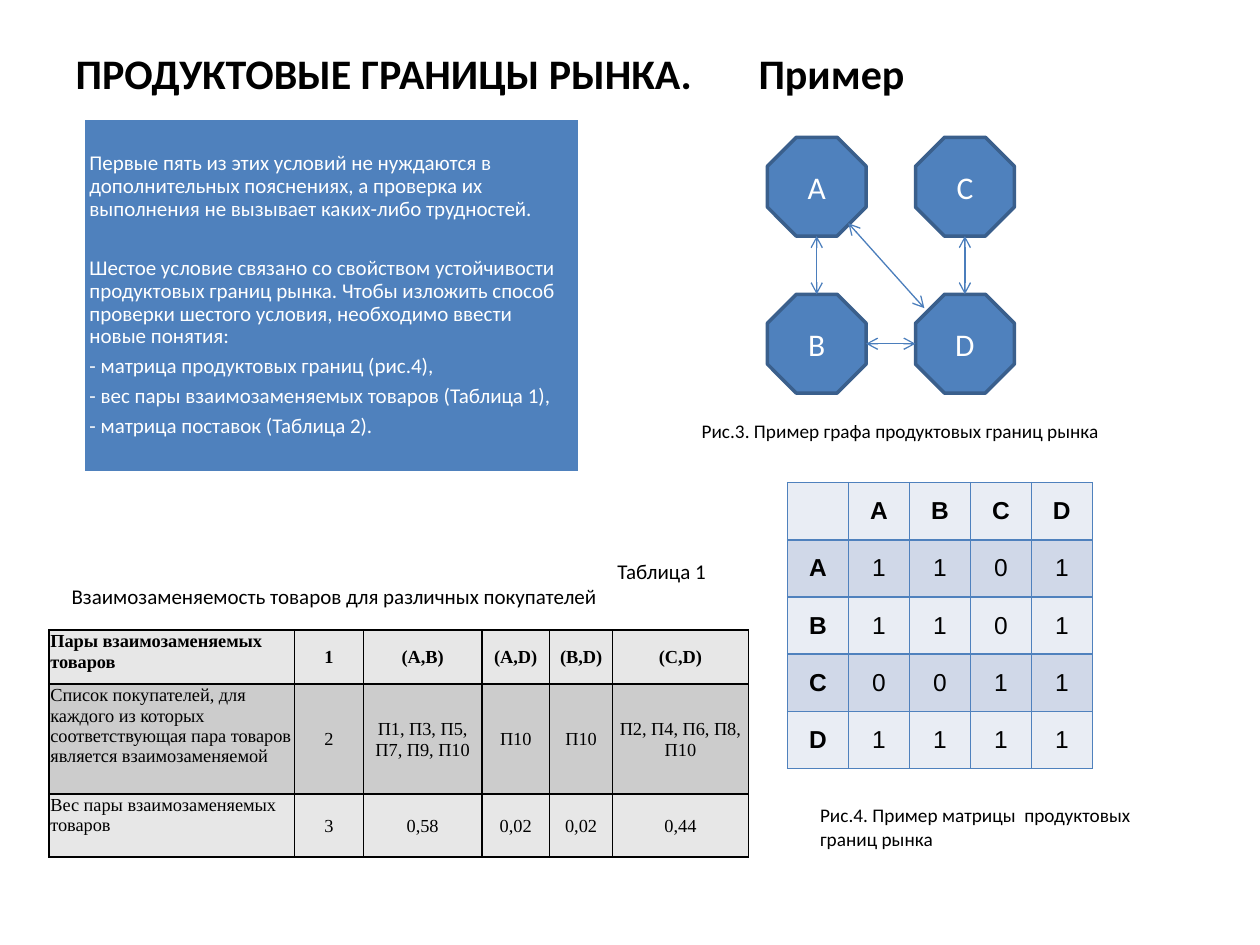
from lxml import etree
from pptx import Presentation
from pptx import util as u
from pptx.dml import color
from pptx.enum import shapes, text
from pptx.oxml import ns

WIDE, HIGH = u.Inches(10), u.Inches(7.5)
LEFT, MID, RIGHT = text.PP_ALIGN.LEFT, text.PP_ALIGN.CENTER, text.PP_ALIGN.RIGHT
BLUE = "4F81BD"


def area(x, y, w, h):
    """Turn percentages of the slide into a box in EMU."""
    return [int(v * side / 100) for v, side in zip((x, y, w, h), (WIDE, HIGH) * 2)]


def rgb(code):
    """Give the colour for a hex string."""
    return color.RGBColor.from_string(code)


def sub(node, tag, **attrs):
    """Append a DrawingML element."""
    return etree.SubElement(node, ns.qn("a:" + tag), attrs)


def put(obj, vals):
    """Set attributes from a dict."""
    for key, val in vals.items():
        setattr(obj, key, val)


def paint(part, fill, line, width):
    """Give a shape a plain fill and line."""
    part.fill.solid()
    part.fill.fore_color.rgb = rgb(fill)
    part.line.color.rgb = rgb(line)
    part.line.width = u.Pt(width)


def write(frame, lines, size, hue="000000", face="Calibri", bold=False, **para):
    """Fill a text frame with formatted paragraphs."""
    frame.text = "\n".join(lines)
    for par in frame.paragraphs:
        put(par, para)
        put(par.font, {"size": u.Pt(size), "name": face, "bold": bold})
        par.font.color.rgb = rgb(hue)


def head(slide, box):
    """Place the two-part title with a tab stop between the parts."""
    title = slide.shapes.title
    put(title, dict(zip(("left", "top", "width", "height"), box)))
    write(title.text_frame, ["ПРОДУКТОВЫЕ ГРАНИЦЫ РЫНКА.\tПример"], 24, bold=True, alignment=LEFT)
    put(title.text_frame, {"vertical_anchor": text.MSO_ANCHOR.MIDDLE,
                           "auto_size": text.MSO_AUTO_SIZE.NONE})
    stops = sub(title.text_frame.paragraphs[0]._p.get_or_add_pPr(), "tabLst")
    sub(stops, "tab", pos=str(u.Inches(5.42)), algn="l")


def panel(slide, box, lines):
    """Place the body text on its blue panel."""
    body = slide.placeholders[1]
    put(body, dict(zip(("left", "top", "width", "height"), box)))
    paint(body, BLUE, "FFFFFF", 2)
    frame = body.text_frame
    write(frame, lines, 12, "FFFFFF", alignment=LEFT, line_spacing=0.9,
          space_before=u.Pt(0), space_after=u.Pt(4.2))
    put(frame, {"vertical_anchor": text.MSO_ANCHOR.MIDDLE, "auto_size": text.MSO_AUTO_SIZE.NONE})
    put(frame, {"margin_" + side: u.Inches(0.05) for side in ("left", "right", "top", "bottom")})
    for par in frame.paragraphs:
        props = par._p.get_or_add_pPr()
        props.set("marL", "0")
        props.set("indent", "0")
        sub(props, "buNone")
    frame.paragraphs[1].space_before = u.Pt(17)


def graph(slide, box, names, links):
    """Draw octagon nodes on a two by two grid and the arrows between them."""
    x, y, w, h = box
    size = int(w * 0.4)
    spots = {}
    for i, name in enumerate(names):
        row, col = divmod(i, 2)
        spots[name] = x + col * (w - size), y + row * (h - size)
        node = slide.shapes.add_shape(shapes.MSO_SHAPE.OCTAGON, *spots[name], size, size)
        node.shadow.inherit = False
        paint(node, BLUE, "3A5F8C", 2)
        write(node.text_frame, [name], 18, "FFFFFF", alignment=MID)
        node.text_frame.vertical_anchor = text.MSO_ANCHOR.MIDDLE
    for start, end, out, into in links:
        ends = [int(p + size * s) for n, at in ((start, out), (end, into))
                for p, s in zip(spots[n], at)]
        link = slide.shapes.add_connector(shapes.MSO_CONNECTOR.STRAIGHT, *ends)
        link.line.color.rgb = rgb("4B7EBC")
        link.line.width = u.Pt(0.75)
        for tip in ("headEnd", "tailEnd"):
            sub(link.line._get_or_add_ln(), tip, type="arrow")
        sub(link._element.spPr, "effectLst")


def note(slide, box, lines, size):
    """Place a wrapped caption."""
    frame = slide.shapes.add_textbox(*box).text_frame
    frame.word_wrap = True
    write(frame, lines, size, alignment=LEFT)
    return frame


def edge(cell, hue):
    """Draw all four borders of a cell."""
    for tag in ("lnL", "lnR", "lnT", "lnB"):
        line = sub(cell._tc.get_or_add_tcPr(), tag, w="12700")
        sub(sub(line, "solidFill"), "srgbClr", val=hue)


def grid(slide, box, data, cols, rows, fills, hue, pads, style, bold, align):
    """Place a table whose columns and rows take weighted shares of the box."""
    table = slide.shapes.add_table(len(data), len(cols), *box).table
    for tracks, parts, full in ((table.columns, cols, box[2]), (table.rows, rows, box[3])):
        for track, part in zip(tracks, parts):
            put(track, {"width" if tracks is table.columns else "height":
                        int(full * part / sum(parts))})
    for r, line in enumerate(data):
        for c, word in enumerate(line):
            cell = table.cell(r, c)
            edge(cell, hue)
            cell.fill.solid()
            cell.fill.fore_color.rgb = rgb(fills[r % 2])
            way = align(c)
            write(cell.text_frame, [word], bold=bold(r, c), alignment=way, **style)
            put(cell, {"margin_" + k: u.Inches(v) for k, v in pads.items()})
            cell.vertical_anchor = text.MSO_ANCHOR.MIDDLE if way == MID else text.MSO_ANCHOR.TOP


def main():
    """Build and save the slide."""
    deck = Presentation()
    put(deck, {"slide_width": WIDE, "slide_height": HIGH})
    slide = deck.slides.add_slide(deck.slide_layouts[1])
    head(slide, area(5, 4, 87.5, 7.47))
    panel(slide, area(6.6, 12.53, 39.4, 37.47), [
        "Первые пять из этих условий не нуждаются в дополнительных пояснениях, "
        "а проверка их выполнения не вызывает каких-либо трудностей.",
        "Шестое условие связано со свойством устойчивости продуктовых границ рынка. "
        "Чтобы изложить способ проверки шестого условия, необходимо ввести новые понятия:",
        "- матрица продуктовых границ (рис.4),",
        "- вес пары взаимозаменяемых товаров (Таблица 1),",
        "- матрица поставок (Таблица 2)."])
    low, top = (0.5, 1), (0.5, 0)
    graph(slide, area(60.9, 14.53, 19.6, 27.07), "ACBD", [
        ("B", "D", (1, 0.5), (0, 0.5)), ("A", "B", low, top),
        ("C", "D", low, top), ("A", "D", (0.82, 0.87), (0.09, 0.14))])
    note(slide, area(54.7, 43.73, 35.2, 3.87), ["Рис.3. Пример графа продуктовых границ рынка"], 11)
    grid(slide, area(62.5, 51.07, 24.2, 30.27),
         [["", *"ABCD"], "A1101", "B1101", "C0011", "D1111"], [1] * 5, [1] * 5,
         ("E9EDF4", "D0D8E8"), BLUE, {"left": 0.07, "right": 0.07, "top": 0, "bottom": 0},
         {"size": 14, "face": "Arial", "space_before": u.Pt(6), "space_after": u.Pt(6)},
         lambda r, c: r == 0 or c == 0, lambda c: MID)
    note(slide, area(64.1, 84.4, 28.9, 10.27),
         ["Рис.4. Пример матрицы  продуктовых границ рынка"], 11)
    grid(slide, area(3.9, 66.67, 55.5, 24), [
        ["Пары взаимозаменяемых товаров", "1", "(A,В)", "(A,D)", "(B,D)", "(С,D)"],
        ["Список покупателей, для каждого из которых соответствующая пара товаров "
         "является взаимозаменяемой", "2", "П1, П3, П5, П7, П9, П10", "П10", "П10",
         "П2, П4, П6, П8, П10"],
        ["Вес пары взаимозаменяемых товаров", "3", "0,58", "0,02", "0,02", "0,44"]],
        [1.95, 0.55, 0.94, 0.54, 0.5, 1.08], [0.43, 0.87, 0.5], ("E7E7E7", "CCCCCC"), "000000",
        {"left": 0.01, "right": 0.01, "top": 0.01, "bottom": 0},
        {"size": 10.5, "face": "Times New Roman", "space_before": u.Pt(6)},
        lambda r, c: r == 0, lambda c: MID if c else LEFT)
    label = note(slide, area(4.7, 58.4, 52.3, 6.8),
                 ["Таблица 1", "Взаимозаменяемость товаров для различных покупателей"], 12)
    label.paragraphs[0].alignment = RIGHT
    deck.save("out.pptx")


if __name__ == "__main__":
    main()
